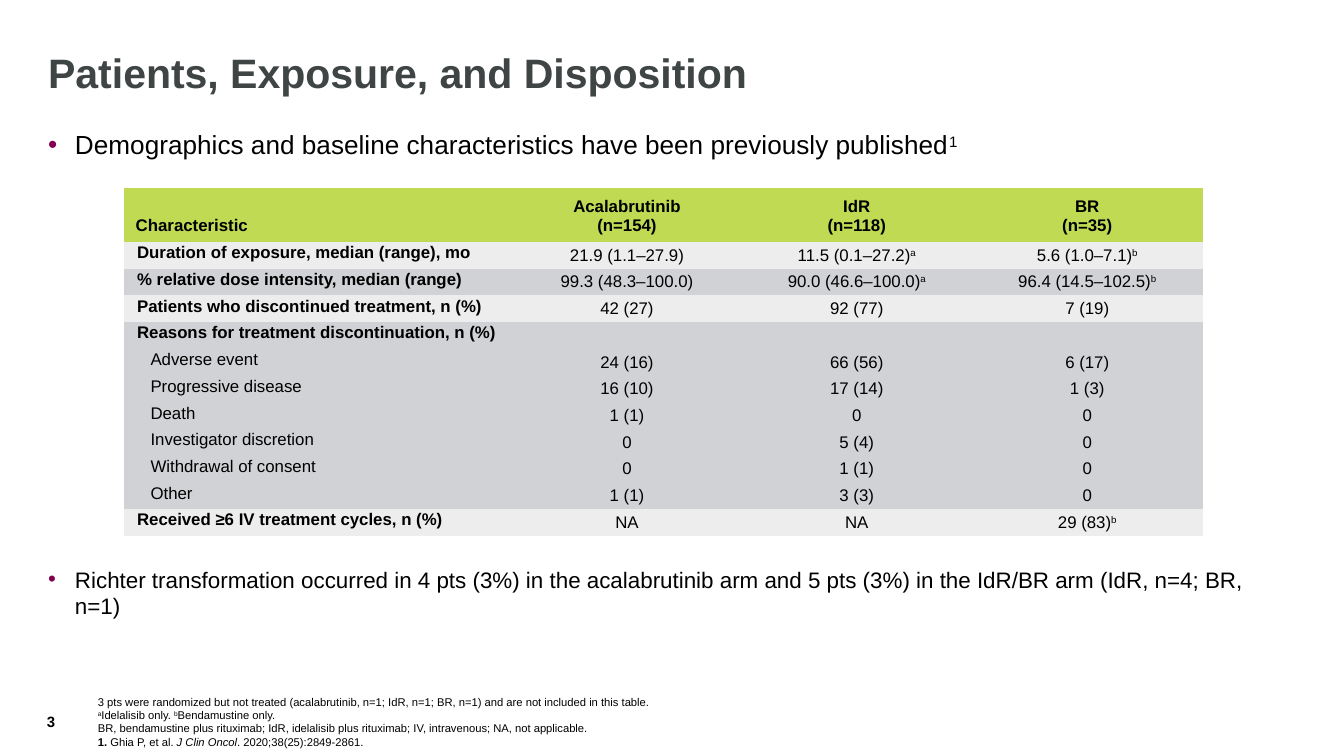
from lxml import etree
from pptx import Presentation
from pptx.dml.color import RGBColor
from pptx.enum.text import MSO_ANCHOR, PP_ALIGN
from pptx.oxml.ns import qn
from pptx.util import Inches, Pt

TOP, MIDDLE, BOTTOM = MSO_ANCHOR.TOP, MSO_ANCHOR.MIDDLE, MSO_ANCHOR.BOTTOM
LEFT, CENTER = PP_ALIGN.LEFT, PP_ALIGN.CENTER

FONT = "Arial"
BLACK = RGBColor(0x00, 0x00, 0x00)
CHARCOAL = RGBColor(0x3F, 0x44, 0x44)
PLUM = RGBColor(0x83, 0x00, 0x51)
LIME = RGBColor(0xC0, 0xDA, 0x53)
LIGHT_GREY = RGBColor(0xED, 0xED, 0xED)
MID_GREY = RGBColor(0xD1, 0xD2, 0xD5)
NO_STYLE = "{2D5ABB26-0587-4C30-8999-92F81FD0307C}"

SLIDE_WIDTH = 10
SLIDE_HEIGHT = SLIDE_WIDTH * 9 / 16
TEXT_INSETS = (0.1, 0.05, 0.1, 0.05)
HEADER_HEIGHT, TABLE_HEIGHT = 0.4, 2.59
COLUMN_WIDTHS = (2.89, 1.71, 1.71, 1.72)
HEADINGS = ("Characteristic", "Acalabrutinib\n(n=154)", "IdR\n(n=118)", "BR\n(n=35)")
SUP_A, SUP_B = ("a", "sup"), ("b", "sup")

MAIN, SUB = "main", "sub"
ROWS = [
    (MAIN, LIGHT_GREY, "Duration of exposure, median (range), mo",
     "21.9 (1.1–27.9)", ["11.5 (0.1–27.2)", SUP_A], ["5.6 (1.0–7.1)", SUP_B]),
    (MAIN, MID_GREY, "% relative dose intensity, median (range)",
     "99.3 (48.3–100.0)", ["90.0 (46.6–100.0)", SUP_A], ["96.4 (14.5–102.5)", SUP_B]),
    (MAIN, LIGHT_GREY, "Patients who discontinued treatment, n (%)", "42 (27)", "92 (77)", "7 (19)"),
    (MAIN, MID_GREY, "Reasons for treatment discontinuation, n (%)", "", "", ""),
    (SUB, MID_GREY, "Adverse event", "24 (16)", "66 (56)", "6 (17)"),
    (SUB, MID_GREY, "Progressive disease", "16 (10)", "17 (14)", "1 (3)"),
    (SUB, MID_GREY, "Death", "1 (1)", "0", "0"),
    (SUB, MID_GREY, "Investigator discretion", "0", "5 (4)", "0"),
    (SUB, MID_GREY, "Withdrawal of consent", "0", "1 (1)", "0"),
    (SUB, MID_GREY, "Other", "1 (1)", "3 (3)", "0"),
    (MAIN, LIGHT_GREY, "Received ≥6 IV treatment cycles, n (%)", "NA", "NA", ["29 (83)", SUP_B]),
]

FOOTNOTES = [
    ["3 pts were randomized but not treated (acalabrutinib, n=1; IdR, n=1; BR, n=1) "
     "and are not included in this table.\n", SUP_A, "Idelalisib only. ", SUP_B,
     "Bendamustine only.\nBR, bendamustine plus rituximab; IdR, idelalisib plus rituximab; "
     "IV, intravenous; NA, not applicable."],
    [("1.", "bold"), " Ghia P, et al. ", ("J Clin Oncol", "italic"), ". 2020;38(25):2849-2861."],
]


def write_spans(para, spans, size, color=BLACK, bold=False):
    """Fill a paragraph from plain strings and (text, style) pairs."""
    for item in [spans] if isinstance(spans, str) else spans:
        text, style = (item, "") if isinstance(item, str) else item
        for index, line in enumerate(text.split("\n")):
            if index:
                para.add_line_break()
            if not line:
                continue
            span = para.add_run()
            span.text = line
            span.font.name = FONT
            span.font.size = Pt(size)
            span.font.color.rgb = color
            span.font.bold = bold or style == "bold"
            span.font.italic = style == "italic"
            if style == "sup":
                span.font._element.set("baseline", "30000")
    if not para.runs:
        etree.SubElement(para._p, qn("a:endParaRPr"), sz=str(size * 100))


def add_text(page, box, paragraphs, size, color=BLACK, bold=False, anchor=TOP, insets=TEXT_INSETS):
    """Add a wrapped text box and return its paragraphs."""
    frame = page.shapes.add_textbox(*map(Inches, box)).text_frame
    frame.word_wrap = True
    frame.vertical_anchor = anchor
    (frame.margin_left, frame.margin_top,
     frame.margin_right, frame.margin_bottom) = map(Inches, insets)
    for index, spans in enumerate(paragraphs):
        para = frame.add_paragraph() if index else frame.paragraphs[0]
        write_spans(para, spans, size, color, bold)
    return frame.paragraphs


def add_title(page, box):
    """Add the slide title."""
    para = add_text(page, box, ["Patients, Exposure, and Disposition"], 22, CHARCOAL, True)[0]
    para.line_spacing = Pt(22.5)


def add_bullet(page, box, spans, size):
    """Add one bulleted statement with a hanging indent."""
    para = add_text(page, box, [spans], size)[0]
    para.space_after = Pt(6)
    properties = para._p.get_or_add_pPr()
    properties.set("marL", str(Inches(0.2)))
    properties.set("indent", str(-Inches(0.2)))
    bullet_color = etree.SubElement(properties, qn("a:buClr"))
    etree.SubElement(bullet_color, qn("a:srgbClr"), val=str(PLUM))
    etree.SubElement(properties, qn("a:buFont"), typeface=FONT)
    etree.SubElement(properties, qn("a:buChar"), char="•")


def fill_cell(cell, spans, fill, insets, anchor=MIDDLE, align=CENTER, bold=False):
    """Write and style one table cell."""
    cell.fill.solid()
    cell.fill.fore_color.rgb = fill
    cell.vertical_anchor = anchor
    (cell.margin_left, cell.margin_top,
     cell.margin_right, cell.margin_bottom) = map(Inches, insets)
    para = cell.text_frame.paragraphs[0]
    para.alignment = align
    write_spans(para, spans, 9, bold=bold)
    return para


def add_exposure_table(page, box):
    """Add the exposure and disposition table."""
    frame = page.shapes.add_table(len(ROWS) + 1, len(HEADINGS), *map(Inches, box))
    table = frame.table
    table.horz_banding = False
    table._tbl.tblPr.find(qn("a:tableStyleId")).text = NO_STYLE
    for column, width in zip(table.columns, COLUMN_WIDTHS):
        column.width = Inches(width)
    row_height = (box[3] - HEADER_HEIGHT) / len(ROWS)
    for index, row in enumerate(table.rows):
        row.height = Inches(row_height if index else HEADER_HEIGHT)
    for index, heading in enumerate(HEADINGS):
        side = 0 if index else 0.09
        fill_cell(table.cell(0, index), heading, LIME, (side, 0.01, side, 0.05),
                  BOTTOM, CENTER if index else LEFT, True)
    for row, (level, fill, label, *values) in enumerate(ROWS, 1):
        indent = 0.1 if level == MAIN else 0.2
        para = fill_cell(table.cell(row, 0), label, fill, (indent, 0, 0.09, 0),
                         align=LEFT, bold=level == MAIN)
        para.line_spacing = Pt(7.6)
        for column, value in enumerate(values, 1):
            fill_cell(table.cell(row, column), value, fill, (0, 0, 0, 0))


def add_footer(page, number_box, notes_box):
    """Add the page number and the footnotes."""
    add_text(page, notes_box, FOOTNOTES, 6, anchor=BOTTOM)
    add_text(page, number_box, ["3"], 8, bold=True, insets=(0, 0, 0, 0))


def main():
    """Build and save the slide."""
    deck = Presentation()
    deck.slide_width, deck.slide_height = Inches(SLIDE_WIDTH), Inches(SLIDE_HEIGHT)
    page = deck.slides.add_slide(deck.slide_layouts[6])
    add_title(page, (0.26, 0.36, 9.59, 0.34))
    add_bullet(page, (0.26, 0.91, 9.44, 1.77),
               ["Demographics and baseline characteristics have been previously published",
                ("1", "sup")], 14)
    add_exposure_table(page, (0.92, 1.4, sum(COLUMN_WIDTHS), TABLE_HEIGHT))
    add_bullet(page, (0.26, 4.16, 9.44, 0.33),
               "Richter transformation occurred in 4 pts (3%) in the acalabrutinib arm "
               "and 5 pts (3%) in the IdR/BR arm (IdR, n=4; BR, n=1)", 12)
    add_footer(page, (0.35, 5.3, 0.43, 0.18), (0.63, 5.29, 9.07, 0.33))
    deck.save("out.pptx")


if __name__ == "__main__":
    main()
